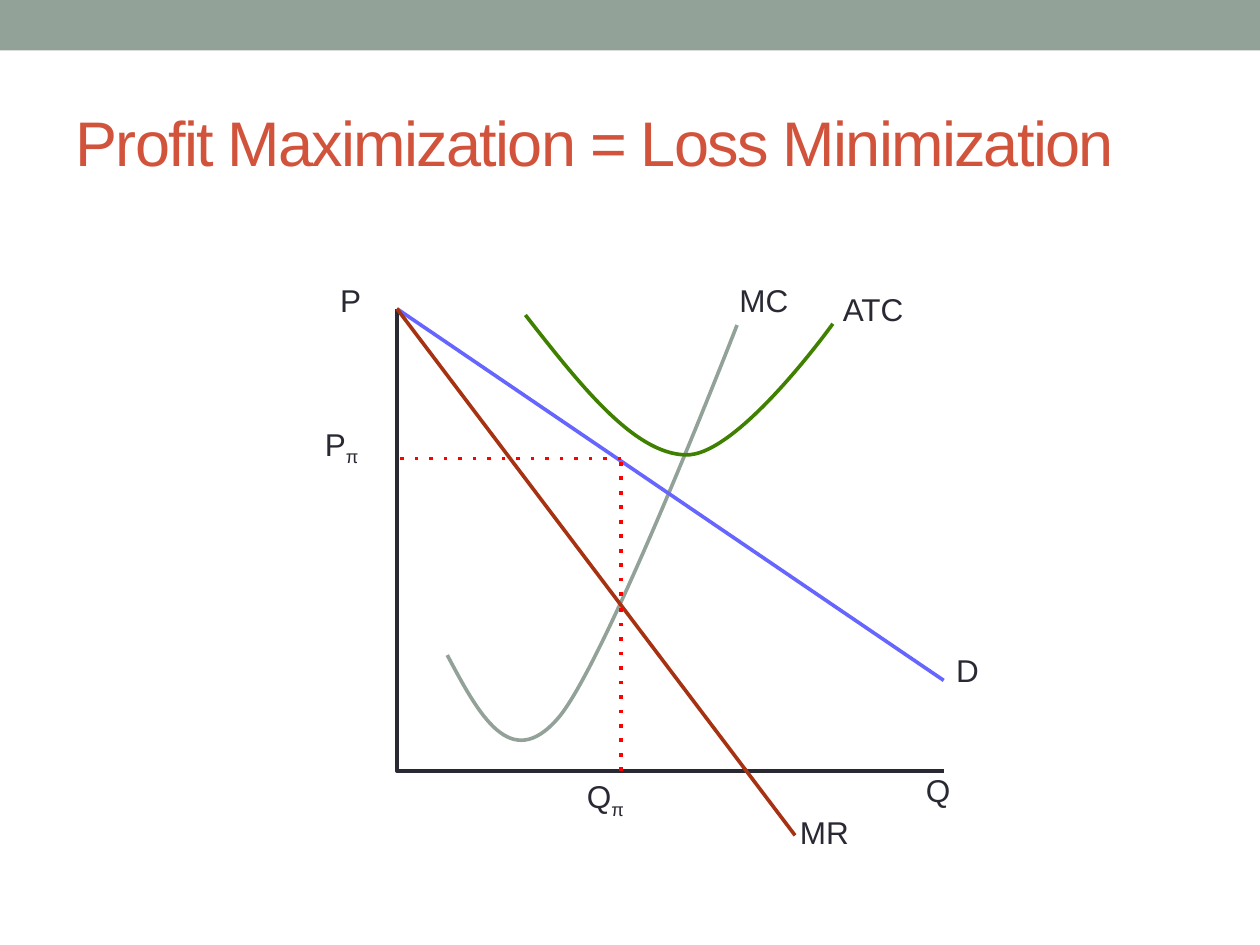
from lxml.etree import SubElement
from pptx import Presentation
from pptx.dml.color import RGBColor
from pptx.enum.shapes import MSO_CONNECTOR, MSO_SHAPE
from pptx.enum.text import MSO_ANCHOR, MSO_AUTO_SIZE, PP_ALIGN
from pptx.oxml.ns import qn
from pptx.util import Inches, Pt

SAGE = RGBColor(0x93, 0xA2, 0x99)
BRICK = RGBColor(0xD2, 0x53, 0x3C)
INK = RGBColor(0x29, 0x29, 0x34)
GREEN = RGBColor(0x40, 0x80, 0x00)
BLUE = RGBColor(0x66, 0x66, 0xFF)
RUST = RGBColor(0xA6, 0x32, 0x12)
RED = RGBColor(0xFF, 0x00, 0x00)

# Key points of the diagram, in inches
ORIGIN_X, ORIGIN_Y = 3.15, 6.12
AXIS_TOP, AXIS_RIGHT = 2.45, 7.49
OPTIMAL_Q, OPTIMAL_P = 4.93, 3.64


class DiagramSlide:
    font = "Arial"
    title_size = Pt(36)
    label_size = Pt(18)
    line_width = Pt(2.08)

    def __init__(self, slide):
        self.slide = slide

    def add_run(self, paragraph, text, size, color):
        run = paragraph.add_run()
        run.text = text
        run.font.name = self.font
        run.font.size = size
        run.font.color.rgb = color
        return run

    def band(self, height, color):
        band = self.slide.shapes.add_shape(
            MSO_SHAPE.RECTANGLE, 0, 0, Inches(10), Inches(height))
        band.shadow.inherit = False
        band.fill.solid()
        band.fill.fore_color.rgb = color
        band.line.fill.background()

    def title(self, text, left, top, width, height):
        title = self.slide.shapes.title
        title.left, title.top = Inches(left), Inches(top)
        title.width, title.height = Inches(width), Inches(height)
        frame = title.text_frame
        frame.vertical_anchor = MSO_ANCHOR.MIDDLE
        frame.auto_size = MSO_AUTO_SIZE.NONE
        paragraph = frame.paragraphs[0]
        paragraph.alignment = PP_ALIGN.LEFT
        run = self.add_run(paragraph, text, self.title_size, BRICK)
        run._r.get_or_add_rPr().set("spc", "-100")

    def label(self, text, left, top, width, subscript=""):
        box = self.slide.shapes.add_textbox(
            Inches(left), Inches(top), Inches(width), Inches(0.55))
        frame = box.text_frame
        frame.word_wrap = False
        frame.auto_size = MSO_AUTO_SIZE.SHAPE_TO_FIT_TEXT
        paragraph = frame.paragraphs[0]
        self.add_run(paragraph, text, self.label_size, INK)
        if subscript:
            run = self.add_run(paragraph, subscript, self.label_size, INK)
            run._r.get_or_add_rPr().set("baseline", "-25000")

    def line(self, start, end, color, dotted=False):
        line = self.slide.shapes.add_connector(
            MSO_CONNECTOR.STRAIGHT, *map(Inches, start + end))
        line.line.color.rgb = color
        line.line.width = self.line_width
        properties = line._element.spPr
        if dotted:
            SubElement(properties.find(qn("a:ln")), qn("a:prstDash"), val="dot")
        SubElement(properties, qn("a:effectLst"))

    def polyline(self, points, color):
        start, *rest = [(Inches(x), Inches(y)) for x, y in points]
        builder = self.slide.shapes.build_freeform(*start)
        builder.add_line_segments(rest, close=False)
        outline = builder.convert_to_shape()
        outline.shadow.inherit = False
        outline.fill.background()
        outline.line.color.rgb = color
        outline.line.width = self.line_width
        return outline

    def curve(self, points, height, color):
        """Draw cubic Béziers: a start point, then three points per segment.

        The height is that of the drawn curve, without its control points.
        """
        outline = self.polyline(points, color)
        path = outline._element.spPr.find(".//" + qn("a:path"))
        segments = path.findall(qn("a:lnTo"))
        for first in range(0, len(segments), 3):
            bezier = SubElement(path, qn("a:cubicBezTo"))
            for segment in segments[first:first + 3]:
                bezier.append(segment[0])
                path.remove(segment)
        outline.height = Inches(height)
        path.set("h", str(Inches(height)))


def main():
    presentation = Presentation()
    presentation.slide_width = Inches(10)
    presentation.slide_height = Inches(7.5)
    diagram = DiagramSlide(
        presentation.slides.add_slide(presentation.slide_layouts[5]))

    diagram.band(0.4, SAGE)
    diagram.title("Profit Maximization = Loss Minimization", 0.5, 0.58, 9, 1.08)

    price_intercept = (ORIGIN_X, AXIS_TOP)
    diagram.polyline([price_intercept, (ORIGIN_X, ORIGIN_Y),
                      (AXIS_RIGHT, ORIGIN_Y)], INK)
    diagram.label("Q", 7.25, 6.07, 0.63)
    diagram.label("P", 2.6, 2.18, 0.52)

    marginal_cost = [(3.55, 5.2), (3.8, 5.67), (4.05, 6.14), (4.43, 5.7),
                     (4.81, 5.26), (5.85, 2.58), (5.85, 2.58)]
    average_cost = [(4.17, 2.5), (4.6, 3.05), (5.03, 3.6), (5.44, 3.61),
                    (5.85, 3.63), (6.61, 2.57), (6.61, 2.57)]
    diagram.curve(marginal_cost, 3.3, SAGE)
    diagram.curve(average_cost, 1.12, GREEN)
    diagram.label("MC", 5.77, 2.18, 0.95)
    diagram.label("ATC", 6.59, 2.25, 1.01)

    diagram.line(price_intercept, (AXIS_RIGHT, 5.4), BLUE)
    diagram.label("D", 7.49, 5.12, 0.54)
    diagram.label("MR", 6.25, 6.4, 0.87)
    diagram.line(price_intercept, (6.31, 6.63), RUST)

    optimum = (OPTIMAL_Q, OPTIMAL_P)
    diagram.line((OPTIMAL_Q, ORIGIN_Y), (OPTIMAL_Q, 4.81), RED, dotted=True)
    diagram.label("Q", 4.56, 6.12, 0.68, subscript="π")
    diagram.line((OPTIMAL_Q, 4.73), optimum, RED, dotted=True)
    diagram.line(optimum, (ORIGIN_X, OPTIMAL_P), RED, dotted=True)
    diagram.label("P", 2.48, 3.32, 0.66, subscript="π")

    presentation.save("out.pptx")


if __name__ == "__main__":
    main()
